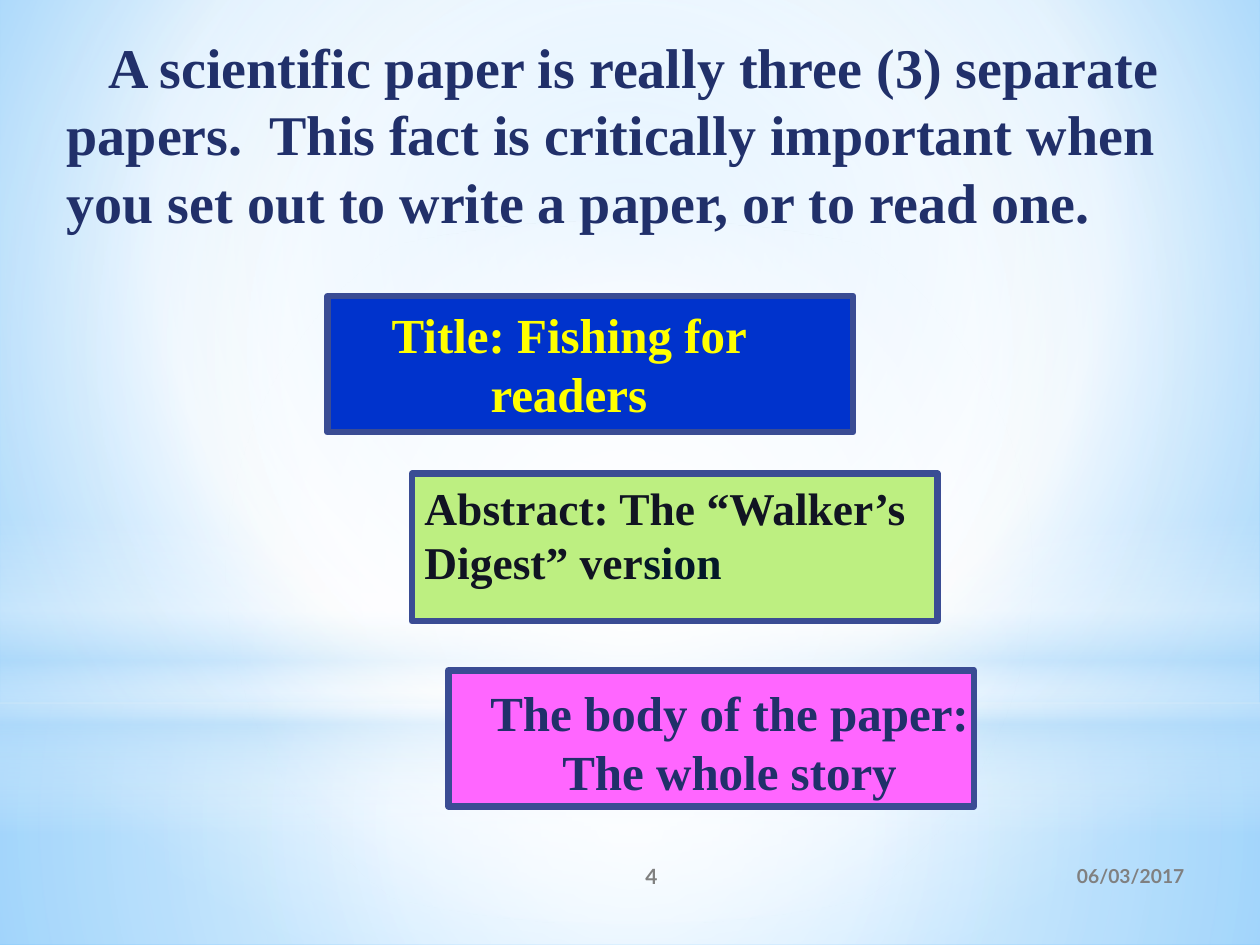
"""Build a slide presenting a scientific paper as three separate papers."""
from lxml import etree
from pptx import Presentation
from pptx.dml.color import RGBColor
from pptx.enum import shapes, text
from pptx.oxml import ns
from pptx.util import Inches, Pt


def color(value):
    return RGBColor.from_string(value)


def write(shape, content, size, fill, font="Times New Roman",
          align=text.PP_ALIGN.LEFT, anchor=text.MSO_ANCHOR.TOP):
    frame = shape.text_frame
    frame.word_wrap = True
    frame.auto_size = text.MSO_AUTO_SIZE.NONE
    frame.vertical_anchor = anchor
    paragraph = frame.paragraphs[0]
    paragraph.alignment = align
    for words, value in zip(content, fill):
        run = paragraph.add_run()
        run.text = words
        run.font.name = font
        run.font.size = Pt(size)
        run.font.bold = True
        run.font.color.rgb = color(value)
    return paragraph


presentation = Presentation()
presentation.slide_width, presentation.slide_height = Inches(10), Inches(7.5)
slide = presentation.slides.add_slide(presentation.slide_layouts[5])

RECTANGLE, OVAL = shapes.MSO_SHAPE.RECTANGLE, shapes.MSO_SHAPE.OVAL
CENTER = (50, 50, 50, 50)
gradients = [
    (None, None, (20, 10, 20, 60),
     [(0, "9ED5FF", 100), (60, "FFFFFF", 100), (100, "5BB9FF", 100)]),
    (RECTANGLE, (0, 5.58, 10, 1.92), CENTER,
     [(0, "FFFFFF", 91), (37, "FFFFFF", 76), (100, "B4DCFA", 79)]),
    (RECTANGLE, (0, 0, 10, 5.58), CENTER,
     [(0, "FFFFFF", 89), (48, "FFFFFF", 62), (100, "B4DCFA", 79)]),
    (RECTANGLE, (0, 4.12, 10, 2.5), None,
     [(0, "FFFFFF", 0), (29, "FFFFFF", 30), (45, "B4DCFA", 40),
      (55, "FFFFFF", 26), (65, "B4DCFA", 60), (100, "FFFFFF", 0)]),
    (OVAL, (0, 1.75, 10, 5.58), CENTER,
     [(0, "FFFFFF", 100), (56, "FFFFFF", 0)]),
]
for kind, place, focus, stops in gradients:
    if kind is None:
        slide.background.fill.solid()
        owner = slide.element
    else:
        panel = slide.shapes.add_shape(kind, *map(Inches, place))
        panel.shadow.inherit = False
        panel.line.fill.background()
        panel.fill.solid()
        owner = panel.element
    gradient = etree.Element(ns.qn("a:gradFill"), rotWithShape="1")
    stop_list = etree.SubElement(gradient, ns.qn("a:gsLst"))
    for position, value, opacity in stops:
        stop = etree.SubElement(stop_list, ns.qn("a:gs"), pos=str(position * 1000))
        tint = etree.SubElement(stop, ns.qn("a:srgbClr"), val=value)
        etree.SubElement(tint, ns.qn("a:alpha"), val=str(opacity * 1000))
    if focus:
        circle = etree.SubElement(gradient, ns.qn("a:path"), path="circle")
        sides = {side: str(share * 1000) for side, share in zip("ltrb", focus)}
        etree.SubElement(circle, ns.qn("a:fillToRect"), **sides)
    else:
        etree.SubElement(gradient, ns.qn("a:lin"), ang="5400000", scaled="0")
    solid = owner.find(".//" + ns.qn("a:solidFill"))
    solid.getparent().replace(solid, gradient)

title = slide.shapes.title
title.element.getparent().append(title.element)
title.left, title.top, title.width, title.height = map(Inches, (0.43, 0.21, 8.9, 1.72))
statement = write(title, ["A scientific paper is really three (3) separate papers.  "
                          "This fact is critically important when you set out to "
                          "write a paper, or to read one."], 32, ["21306A"])
statement._p.get_or_add_pPr().set("indent", str(Inches(0.33)))

cards = [
    ((3.56, 5.32, 4.17, 1.08), "FF66FF", (3.73, 5.37, 4.12, 1.04),
     ["The body of the paper: The whole story"], 28, ["21306A"], text.PP_ALIGN.CENTER),
    ((3.27, 3.76, 4.17, 1.17), "BDEF81", (3.27, 3.76, 4.57, 0.98),
     ["Abstract: The “Walker’s Digest” ver", "sion"], 26, ["111422", "031828"],
     text.PP_ALIGN.LEFT),
    ((2.6, 2.35, 4.17, 1.08), "0033CC", (2.53, 2.37, 3.97, 1.04),
     ["Title: Fishing for readers"], 28, ["FFFF00"], text.PP_ALIGN.CENTER),
]
for box_place, box_fill, label_place, content, size, fill, align in cards:
    group = slide.shapes.add_group_shape()
    box = group.shapes.add_shape(RECTANGLE, *map(Inches, box_place))
    box.shadow.inherit = False
    box.fill.solid()
    box.fill.fore_color.rgb = color(box_fill)
    box.line.color.rgb = color("3A4C94")
    box.line.width = Pt(3.78)
    label = group.shapes.add_textbox(*map(Inches, label_place))
    write(label, content, size, fill, align=align)

footers = [
    ("4", 4.17, 2, 12, text.PP_ALIGN.CENTER),
    ("06/03/2017", 6.75, 2.75, 11, text.PP_ALIGN.RIGHT),
]
for content, left, width, size, align in footers:
    footer = slide.shapes.add_textbox(*map(Inches, (left, 6.75, width, 0.4)))
    write(footer, [content], size, ["808080"], font="Lato", align=align,
          anchor=text.MSO_ANCHOR.MIDDLE)

presentation.save("out.pptx")
